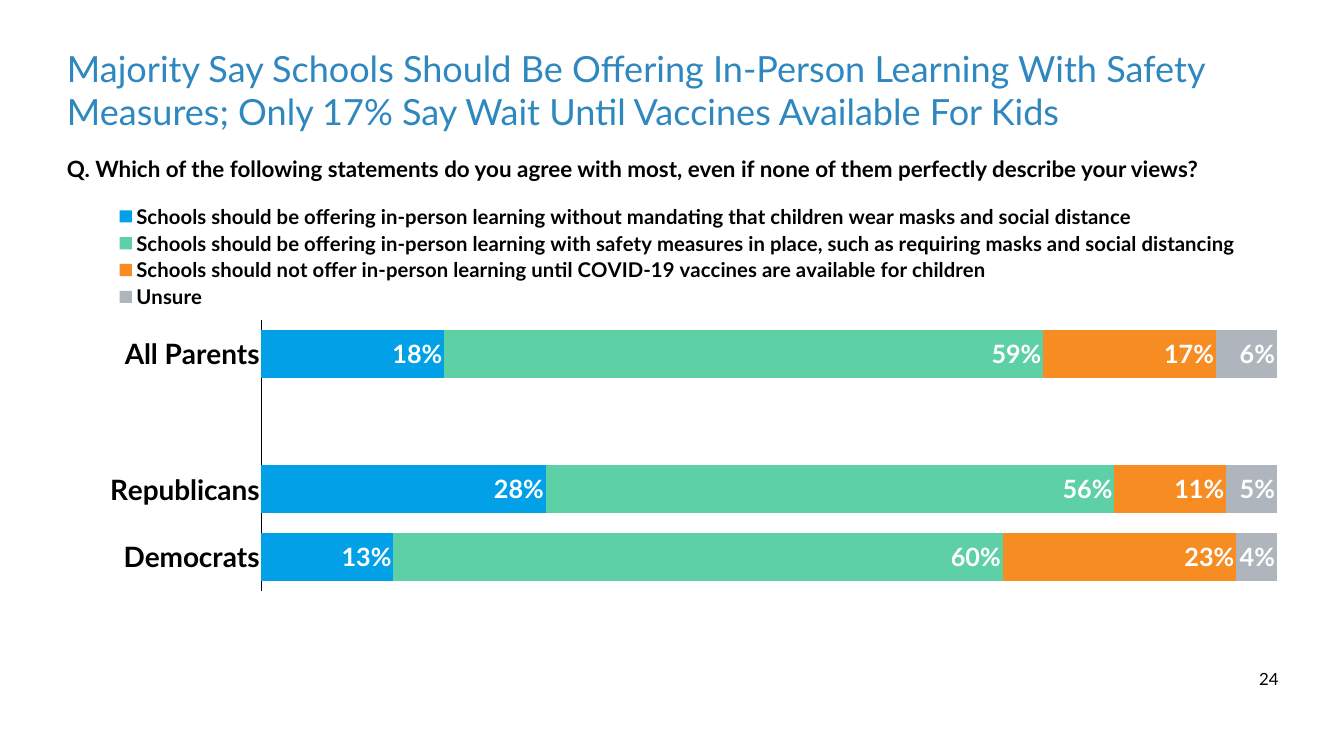
from dataclasses import dataclass

from lxml.etree import SubElement
from pptx import Presentation
from pptx.chart.data import CategoryChartData
from pptx.dml.color import RGBColor
from pptx.enum.chart import (XL_CHART_TYPE, XL_LABEL_POSITION, XL_LEGEND_POSITION,
                             XL_TICK_LABEL_POSITION, XL_TICK_MARK)
from pptx.enum.text import PP_ALIGN
from pptx.oxml.ns import qn
from pptx.util import Inches, Pt

TITLE = ("Majority Say Schools Should Be Offering In-Person Learning With Safety "
         "Measures; Only 17% Say Wait Until Vaccines Available For Kids")
QUESTION = ("Q. Which of the following statements do you agree with most, "
            "even if none of them perfectly describe your views?")
PAGE_NUMBER = "24"
GROUPS = ["All Parents", "", "Republicans", "Democrats"]
ANSWERS = [
    ("Schools should be offering in-person learning without mandating that children "
     "wear masks and social distance", "02A0E7", [0.18, None, 0.28, 0.13]),
    ("Schools should be offering in-person learning with safety measures in place, such as "
     "requiring masks and social distancing", "5DD0A5", [0.59, None, 0.56, 0.60]),
    ("Schools should not offer in-person learning until COVID-19 vaccines are available "
     "for children", "F78C22", [0.17, None, 0.11, 0.23]),
    ("Unsure", "AEB5BC", [0.06, None, 0.05, 0.04]),
]
PLOT_AREA = {"x": 0.18, "y": 0.29, "w": 0.8, "h": 0.665}
LEGEND_AREA = {"x": 0.06, "y": 0.0, "w": 0.89, "h": 0.27}


@dataclass(frozen=True)
class Theme:
    """Hold the colours and type sizes of the slide."""
    font: str = "Lato"
    heading: str = "2E88BF"
    ink: str = "000000"
    paper: str = "FFFFFF"
    title_size: float = 51.5
    question_size: float = 32
    number_size: float = 24
    group_size: float = 40
    value_size: float = 36
    legend_size: float = 29


THEME = Theme()


def style_font(font, size, color, bold=False):
    """Set face, size, colour and weight of a font."""
    font.name, font.size, font.bold = THEME.font, Pt(size), bold
    font.color.rgb = RGBColor.from_string(color)


def add_text(page, text, place, size, color, bold=False, wrap=True, align=PP_ALIGN.LEFT):
    """Add a one-paragraph text box."""
    frame = page.shapes.add_textbox(*map(Inches, place)).text_frame
    frame.word_wrap = wrap
    frame.margin_left = frame.margin_right = Inches(0.08)
    frame.margin_top = frame.margin_bottom = Inches(0.08)
    paragraph = frame.paragraphs[0]
    paragraph.text, paragraph.alignment = text, align
    style_font(paragraph.font, size, color, bold)


def place_part(layout, area, inner=False):
    """Fix a chart part at fractions of the chart's size."""
    manual = SubElement(layout, qn("c:manualLayout"))
    settings = [("layoutTarget", "inner")] if inner else []
    settings += [("xMode", "edge"), ("yMode", "edge"), *area.items()]
    for name, value in settings:
        SubElement(manual, qn(f"c:{name}")).set("val", str(value))


def new_layout(parent, position):
    """Put an empty layout element into a chart part."""
    for old in parent.findall(qn("c:layout")):
        parent.remove(old)
    layout = SubElement(parent, qn("c:layout"))
    parent.insert(position, layout)
    return layout


def style_axes(chart):
    """Show group names beside a plain line and hide the value scale."""
    groups, scale = chart.category_axis, chart.value_axis
    for axis in (groups, scale):
        axis.major_tick_mark = axis.minor_tick_mark = XL_TICK_MARK.NONE
        axis.has_major_gridlines = False
    groups.reverse_order = True
    groups.format.line.color.rgb = RGBColor.from_string(THEME.ink)
    groups.format.line.width = Pt(1)
    style_font(groups.tick_labels.font, THEME.group_size, THEME.ink, True)
    scale.minimum_scale, scale.maximum_scale = 0, 1.01
    scale.tick_label_position = XL_TICK_LABEL_POSITION.NONE
    scale.format.line.fill.background()


def add_answer_chart(page, place):
    """Add the stacked bars of answers by group."""
    data = CategoryChartData(number_format="0%")
    data.categories = GROUPS
    for name, _, values in ANSWERS:
        data.add_series(name, values)
    chart = page.shapes.add_chart(
        XL_CHART_TYPE.BAR_STACKED, *map(Inches, place), data).chart
    style_font(chart.font, 10, THEME.ink)
    chart.has_title = False
    style_axes(chart)

    plot = chart.plots[0]
    plot.gap_width, plot.overlap, plot.vary_by_categories = 40, 100, False
    for series, (_, color, _) in zip(plot.series, ANSWERS):
        series.format.fill.solid()
        series.format.fill.fore_color.rgb = RGBColor.from_string(color)
        labels = series.data_labels
        labels.show_value = True
        labels.number_format, labels.number_format_is_linked = "#,##0%", False
        labels.position = XL_LABEL_POSITION.INSIDE_END
        style_font(labels.font, THEME.value_size, THEME.paper, True)

    chart.has_legend = True
    legend = chart.legend
    legend.position, legend.include_in_layout = XL_LEGEND_POSITION.TOP, True
    style_font(legend.font, THEME.legend_size, THEME.ink, True)
    chart_part = chart.element.find(qn("c:chart"))
    place_part(new_layout(chart_part.find(qn("c:plotArea")), 0), PLOT_AREA, inner=True)
    place_part(new_layout(chart_part.find(qn("c:legend")), 1), LEGEND_AREA)


def main():
    """Build and save the slide."""
    deck = Presentation()
    deck.slide_width, deck.slide_height = Inches(26.67), Inches(15)
    page = deck.slides.add_slide(deck.slide_layouts[6])
    add_text(page, TITLE, (1.25, 0.84, 24.17, 2.08), THEME.title_size, THEME.heading)
    add_text(page, PAGE_NUMBER, (24.9, 13.19, 0.56, 0.56), THEME.number_size, THEME.ink,
             wrap=False, align=PP_ALIGN.CENTER)
    add_text(page, QUESTION, (1.25, 3, 24.17, 1.18), THEME.question_size, THEME.ink, bold=True)
    add_answer_chart(page, (0.61, 4, 25.44, 8.09))
    deck.save("out.pptx")


if __name__ == "__main__":
    main()
